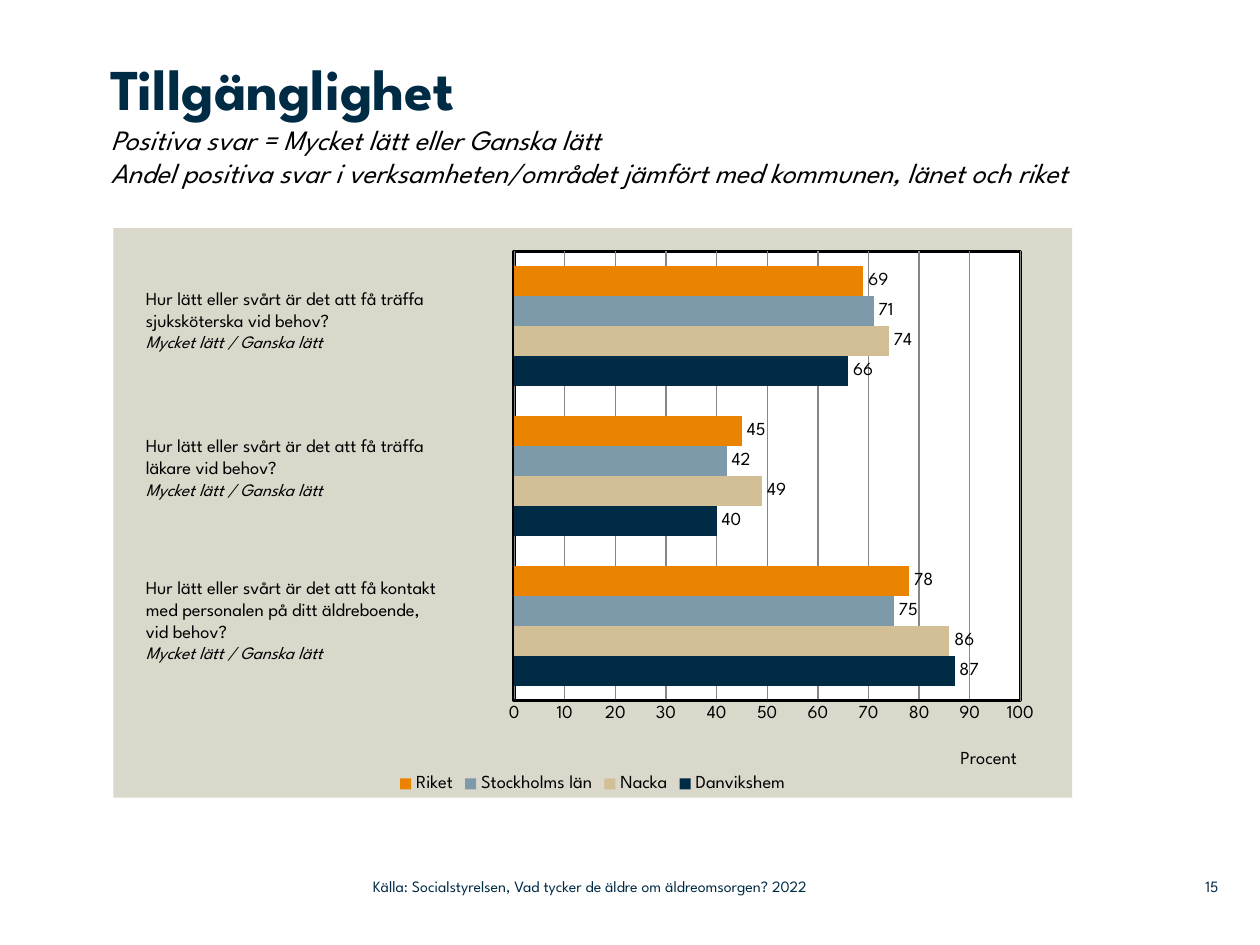
from pptx import Presentation
from pptx.chart.data import CategoryChartData
from pptx.dml.color import RGBColor
from pptx.enum import chart as charts, text
from pptx.oxml import parse_xml
from pptx.oxml.ns import nsdecls
from pptx.util import Inches, Pt

FONT = "League Spartan"
COLORS = {"navy": "002B45", "black": "000000", "panel": "DAD7CB", "white": "FFFFFF",
          "sand": "D3BF96", "steel": "7D9AAA", "orange": "E98300", "grid": "868686"}
SERIES = [("Danvikshem", (87, 40, 66), "navy"), ("Nacka", (86, 49, 74), "sand"),
          ("Stockholms län", (75, 42, 71), "steel"), ("Riket", (78, 45, 69), "orange")]
ANSWER = "Mycket lätt / Ganska lätt"
QUESTIONS = [
    ((1.06, 2.23, 2.99, 0.81),
     ["Hur lätt eller svårt är det att få träffa sjuksköterska vid behov?"]),
    ((1.06, 3.4, 2.93, 0.81),
     ["Hur lätt eller svårt är det att få träffa", "läkare vid behov?"]),
    ((1.06, 4.52, 3.01, 0.98),
     ["Hur lätt eller svårt är det att få kontakt",
      "med personalen på ditt äldreboende,", "vid behov?"]),
]


def color(name):
    return RGBColor.from_string(COLORS[name])


def style_font(font, size, name="black", bold=False, italic=False):
    font.name, font.size, font.bold, font.italic = FONT, Pt(size), bold, italic
    font.color.rgb = color(name)


def add_run(paragraph, words, *style, **options):
    run = paragraph.add_run()
    run.text = words
    style_font(run.font, *style, **options)


def fill(format_, name):
    format_.fill.solid()
    format_.fill.fore_color.rgb = color(name)


def clear_margins(frame):
    frame.margin_left = frame.margin_right = frame.margin_top = frame.margin_bottom = 0


def add_text_frame(slide, box):
    frame = slide.shapes.add_textbox(*map(Inches, box)).text_frame
    frame.word_wrap = True
    return frame


def add_title(slide, box):
    title = slide.shapes.title
    title.left, title.top, title.width, title.height = map(Inches, box)
    frame = title.text_frame
    frame.word_wrap = True
    frame.auto_size = text.MSO_AUTO_SIZE.NONE
    frame.vertical_anchor = text.MSO_ANCHOR.TOP
    clear_margins(frame)
    paragraph = frame.paragraphs[0]
    paragraph.alignment = text.PP_ALIGN.LEFT
    add_run(paragraph, "Tillgänglighet", 33, "navy", bold=True)
    for line in ("Positiva svar = Mycket lätt eller Ganska lätt",
                 "Andel positiva svar i verksamheten/området jämfört med kommunen, länet och riket"):
        paragraph.add_line_break()
        add_run(paragraph, line, 16, italic=True)


def manual_layout(x, y, width=None, height=None):
    target = '<c:layoutTarget val="inner"/>' if width else ""
    size = f'<c:w val="{width}"/><c:h val="{height}"/>' if width else ""
    return parse_xml(
        f'<c:layout {nsdecls("c")}><c:manualLayout>{target}'
        '<c:xMode val="edge"/><c:yMode val="edge"/>'
        f'<c:x val="{x}"/><c:y val="{y}"/>{size}</c:manualLayout></c:layout>')


def shape_properties(fill_name, line_xml):
    return parse_xml(
        f'<c:spPr {nsdecls("c", "a")}><a:solidFill><a:srgbClr val="{COLORS[fill_name]}"/>'
        f'</a:solidFill>{line_xml}</c:spPr>')


def format_axes(chart):
    chart.category_axis.visible = False
    axis = chart.value_axis
    axis.minimum_scale, axis.maximum_scale, axis.major_unit = 0, 100, 10
    axis.major_tick_mark = axis.minor_tick_mark = charts.XL_TICK_MARK.NONE
    axis.format.line.color.rgb = color("black")
    axis.format.line.width = Pt(2)
    axis.has_major_gridlines = True
    axis.major_gridlines.format.line.color.rgb = color("grid")
    axis.major_gridlines.format.line.width = Pt(0.75)
    axis.has_title = True
    add_run(axis.axis_title.text_frame.paragraphs[0], "Procent", 10.5)
    title = axis.axis_title._element
    for layout in title.xpath("c:layout"):
        title.remove(layout)
    title.xpath("c:tx")[0].addnext(manual_layout(0.88, 0.91))


def format_areas(chart):
    # Panel behind the chart and framed plot area
    space = chart._chartSpace
    space.chart.addnext(shape_properties("panel", "<a:ln><a:noFill/></a:ln>"))
    plot_area = space.chart.plotArea
    for layout in plot_area.xpath("c:layout"):
        plot_area.remove(layout)
    plot_area.insert(0, manual_layout(0.418, 0.041, 0.528, 0.789))
    plot_area.append(shape_properties(
        "white", f'<a:ln w="{Pt(2)}"><a:solidFill><a:srgbClr val="{COLORS["black"]}"/>'
        '</a:solidFill></a:ln>'))


def add_answer_chart(slide, box):
    data = CategoryChartData()
    data.categories = ["1", "2", "3"]
    for name, values, _ in SERIES:
        data.add_series(name, values)
    chart = slide.shapes.add_chart(
        charts.XL_CHART_TYPE.BAR_CLUSTERED, *map(Inches, box), data).chart
    style_font(chart.font, 10.5)
    chart.has_title = False
    chart.has_legend = True
    chart.legend.position = charts.XL_LEGEND_POSITION.BOTTOM
    chart.legend.include_in_layout = False
    style_font(chart.legend.font, 10.5)
    plot = chart.plots[0]
    plot.gap_width, plot.overlap, plot.vary_by_categories = 100, 0, False
    for series, (_, _, name) in zip(plot.series, SERIES):
        fill(series.format, name)
        labels = series.data_labels
        labels.show_value = True
        labels.position = charts.XL_LABEL_POSITION.OUTSIDE_END
        style_font(labels.font, 10.5)
    format_axes(chart)
    format_areas(chart)


def add_question(slide, box, lines):
    frame = add_text_frame(slide, box)
    for index, line in enumerate(lines):
        paragraph = frame.add_paragraph() if index else frame.paragraphs[0]
        add_run(paragraph, line, 10.5)
    add_run(frame.add_paragraph(), ANSWER, 10, italic=True)


def add_footer(slide, box, words, alignment):
    frame = add_text_frame(slide, box)
    clear_margins(frame)
    frame.vertical_anchor = text.MSO_ANCHOR.MIDDLE
    frame.paragraphs[0].alignment = alignment
    add_run(frame.paragraphs[0], words, 9, "navy")


def main():
    presentation = Presentation()
    presentation.slide_width, presentation.slide_height = Inches(10), Inches(7.5)
    slide = presentation.slides.add_slide(presentation.slide_layouts[5])
    add_title(slide, (0.88, 0.42, 7.77, 1.39))
    add_answer_chart(slide, (0.9, 1.81, 7.61, 4.52))
    for box, lines in QUESTIONS:
        add_question(slide, box, lines)
    # Source and page number
    add_footer(slide, (2.96, 6.89, 4.43, 0.29),
               "Källa: Socialstyrelsen, Vad tycker de äldre om äldreomsorgen? 2022",
               text.PP_ALIGN.LEFT)
    add_footer(slide, (9.2, 6.89, 0.47, 0.29), "15", text.PP_ALIGN.RIGHT)
    presentation.save("out.pptx")


if __name__ == "__main__":
    main()
